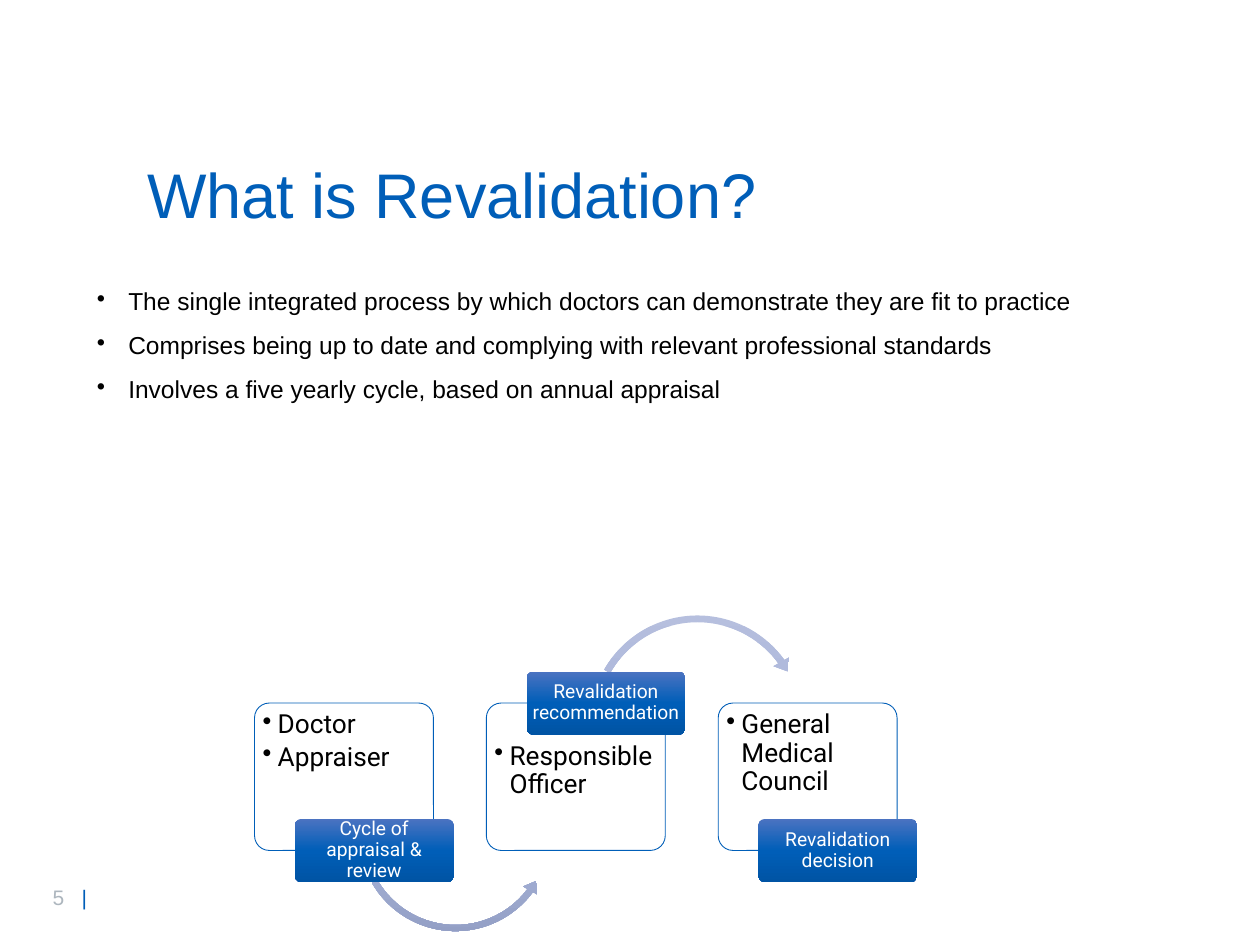
from copy import deepcopy

from lxml.etree import SubElement
from pptx import Presentation
from pptx.dml.color import RGBColor
from pptx.enum.shapes import MSO_SHAPE as Shape
from pptx.enum.text import MSO_ANCHOR as Anchor, PP_ALIGN as Align
from pptx.oxml.ns import qn
from pptx.util import Inches, Pt

BLUE = RGBColor(0x00, 0x5E, 0xB8)
GREY = RGBColor(0xAD, 0xB6, 0xBE)
BLACK = RGBColor(0x00, 0x00, 0x00)
WHITE = RGBColor(0xFF, 0xFF, 0xFF)
LABEL_STOPS = [RGBColor(0x4B, 0x73, 0xC1), BLUE, RGBColor(0x00, 0x54, 0xA4)]
ARROW_STOPS = [RGBColor(0xB6, 0xBF, 0xDE), RGBColor(0xA9, 0xB5, 0xDA),
               RGBColor(0x93, 0x9F, 0xC5)]


def write(frame, lines, look, hang=None, gaps=None):
    """Fill a frame with paragraphs; hang is the bullet indent in inches."""
    frame.word_wrap = True
    for i, line in enumerate(lines):
        para = frame.paragraphs[0] if i == 0 else frame.add_paragraph()
        if hang:
            props = para._p.get_or_add_pPr()
            props.set("marL", str(Inches(hang)))
            props.set("indent", str(-Inches(hang)))
            SubElement(props, qn("a:buChar")).set("char", "•")
        para.line_spacing = 0.9
        if i and gaps:
            para.space_before = Pt(gaps)
        run = para.add_run()
        run.text = line
        run.font.color.rgb = look["color"]
        run.font.name = look["name"]
        run.font.size = Pt(look["size"])


def add_gradient_shape(kind, box, adjustments, colors):
    shape = slide.shapes.add_shape(kind, *map(Inches, box))
    shape.shadow.inherit = False
    shape.line.fill.background()
    for i, value in enumerate(adjustments):
        shape.adjustments[i] = value
    shape.fill.gradient()
    shape.fill.gradient_angle = 270
    stop_list = shape._element.spPr.find(".//" + qn("a:gsLst"))
    stop_list.insert(1, deepcopy(stop_list[0]))
    for i, (stop, color) in enumerate(zip(shape.fill.gradient_stops, colors)):
        stop.position = i / 2
        stop.color.rgb = color
    return shape


prs = Presentation()
prs.slide_width, prs.slide_height = Inches(10), Inches(7.5)
slide = prs.slides.add_slide(prs.slide_layouts[6])

# Page number
page_number = slide.shapes.add_textbox(
    Inches(0.32), Inches(6.97), Inches(0.71), Inches(0.3))
page_number.text_frame.word_wrap = True
page_line = page_number.text_frame.paragraphs[0]
tabs = SubElement(page_line._p.get_or_add_pPr(), qn("a:tabLst"))
tab = SubElement(tabs, qn("a:tab"))
tab.set("pos", str(Inches(0.23)))
tab.set("algn", "l")
for text, color in [("5\t", GREY), ("|", BLUE)]:
    run = page_line.add_run()
    run.text = text
    run.font.name, run.font.size = "Arial", Pt(12)
    run.font.color.rgb = color

# Title and key points
title = slide.shapes.add_textbox(
    Inches(1.07), Inches(1.25), Inches(8.43), Inches(1.42))
write(title.text_frame, ["What is Revalidation?"],
      {"name": "Arial", "size": 36, "color": BLUE})
key_points = slide.shapes.add_textbox(
    Inches(0.67), Inches(2.25), Inches(8.83), Inches(3.64))
write(key_points.text_frame, [
    "The single integrated process by which doctors can demonstrate they are fit to practice",
    "Comprises being up to date and complying with relevant professional standards",
    "Involves a five yearly cycle, based on annual appraisal",
], {"name": "Arial", "size": 14, "color": BLACK}, hang=0.25, gaps=10)

# Process: people, text offset, step, step top, arrow to the next stage
STAGES = [
    (["Doctor", "Appraiser"], 0, "Cycle of appraisal & review", 6.5,
     (Shape.LEFT_CIRCULAR_ARROW, (2.81, 5.82, 1.61, 1.61),
      (0.03, 4.26, 22.01, 90.25, 0.04))),
    (["Responsible Officer"], 0.25, "Revalidation recommendation", 5.33,
     (Shape.CIRCULAR_ARROW, (4.64, 4.84, 1.79, 1.79),
      (0.03, 3.8, 194.45, 125.76, 0.04))),
    (["General Medical Council"], 0, "Revalidation decision", 6.5, None),
]
for i, (people, offset, step, step_top, arrow) in enumerate(STAGES):
    left = 2.02 + 1.84 * i
    card = slide.shapes.add_shape(
        Shape.ROUNDED_RECTANGLE, Inches(left), Inches(5.58), Inches(1.42), Inches(1.17))
    card.shadow.inherit = False
    card.adjustments[0] = 0.1
    card.fill.solid()
    card.fill.fore_color.rgb = WHITE
    fill_color = card._element.spPr.find(qn("a:solidFill"))[0]
    SubElement(fill_color, qn("a:alpha")).set("val", "90000")
    card.line.color.rgb = BLUE
    card.line.width = Pt(0.5)
    frame = card.text_frame
    frame.vertical_anchor = Anchor.TOP
    frame.margin_left = frame.margin_right = frame.margin_bottom = Inches(0.03)
    frame.margin_top = Inches(0.03 + offset)
    write(frame, people, {"name": "Roboto", "size": 15, "color": BLACK},
          hang=0.12, gaps=2.5)
    for para in frame.paragraphs:
        para.alignment = Align.LEFT

    if arrow:
        add_gradient_shape(*arrow, ARROW_STOPS)
    label = add_gradient_shape(Shape.ROUNDED_RECTANGLE, (left + 0.32, step_top, 1.26, 0.5),
                               [0.1], LABEL_STOPS)
    frame = label.text_frame
    frame.vertical_anchor = Anchor.MIDDLE
    for side in ("left", "right", "top", "bottom"):
        setattr(frame, f"margin_{side}", Inches(0.02))
    write(frame, [step], {"name": "Roboto", "size": 11, "color": WHITE})
    frame.paragraphs[0].alignment = Align.CENTER

prs.save("out.pptx")
